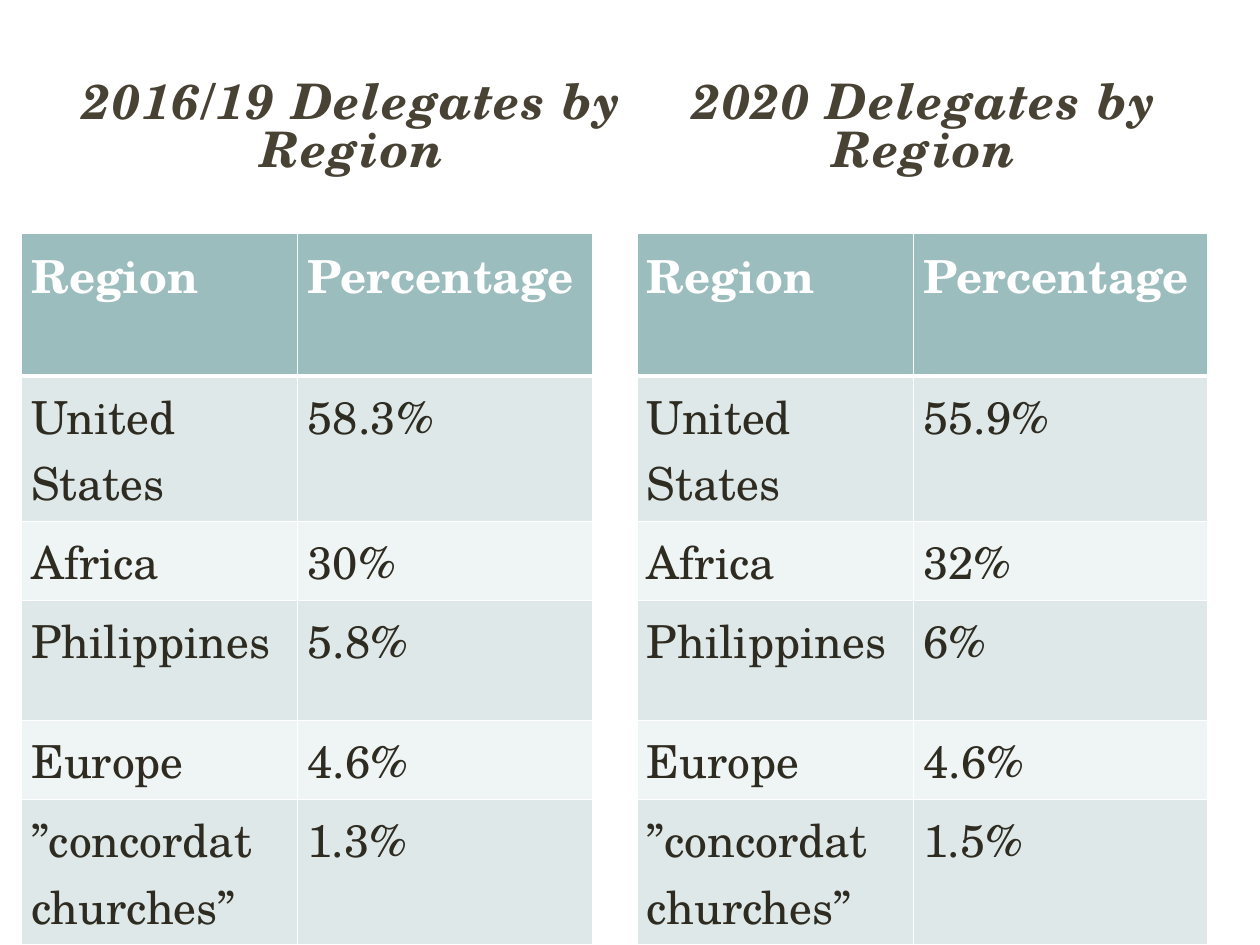
from pptx import Presentation
from pptx.dml.color import RGBColor
from pptx.enum.text import MSO_ANCHOR as Anchor, PP_ALIGN as Align
from pptx.oxml import parse_xml
from pptx.oxml.ns import nsdecls
from pptx.util import Cm, Pt

FONT = "TeX Gyre Schola"
COLUMNS = (5.57, 5.94)
ROWS = (2.87, 2.93, 1.6, 2.41, 1.6, 2.93)
REGIONS = ("United States", "Africa", "Philippines", "Europe", "”concordat churches”")


def colour(value):
    return RGBColor.from_string(value)


class DelegatePage:
    title_ink = "474233"
    body_ink = "2E2B21"
    white = "FFFFFF"
    header_fill = "9CBDBD"
    bands = ("EFF4F4", "DEE8E8")

    def __init__(self, deck):
        self.page = deck.slides.add_slide(deck.slide_layouts[6])

    def style(self, para, size, ink, bold, italic=False):
        font = para.font
        font.name, font.size = FONT, Pt(size)
        font.bold, font.italic = bold, italic
        font.color.rgb = colour(ink)

    def heading(self, text, left, width):
        box = self.page.shapes.add_textbox(Cm(left), Cm(0.91), Cm(width), Cm(3.4))
        frame = box.text_frame
        frame.word_wrap = True
        frame.vertical_anchor = Anchor.MIDDLE
        para = frame.paragraphs[0]
        span = para.add_run()
        span.text = text
        span.font._element.set("spc", "100")
        para.alignment = Align.CENTER
        para.line_spacing = 0.8
        self.style(para, 28, self.title_ink, True, True)

    def border(self, cell, side, width):
        cell._tc.get_or_add_tcPr().append(parse_xml(
            f'<a:ln{side} {nsdecls("a")} w="{Pt(width)}"><a:solidFill>'
            f'<a:srgbClr val="{self.white}"/></a:solidFill></a:ln{side}>'))

    def cell(self, cell, text, row):
        header = row == 0
        cell.text = text
        cell.margin_left = cell.margin_right = Cm(0.2)
        cell.margin_top = cell.margin_bottom = Cm(0.13)
        widths = {"L": 1, "R": 1, "T": 3 if row == 1 else 1, "B": 3 if header else 1}
        for side, width in widths.items():
            self.border(cell, side, width)
        cell.fill.solid()
        cell.fill.fore_color.rgb = colour(self.header_fill if header else self.bands[row % 2])
        ink = self.white if header else self.body_ink
        self.style(cell.text_frame.paragraphs[0], 26, ink, header)

    def table(self, left, shares):
        records = [("Region", "Percentage"), *zip(REGIONS, shares)]
        table = self.page.shapes.add_table(
            len(ROWS), len(COLUMNS), Cm(left), Cm(4.71),
            Cm(sum(COLUMNS)), Cm(sum(ROWS))).table
        for column, width in zip(table.columns, COLUMNS):
            column.width = Cm(width)
        for index, (height, record) in enumerate(zip(ROWS, records)):
            table.rows[index].height = Cm(height)
            for place, text in enumerate(record):
                self.cell(table.cell(index, place), text, index)


def main():
    deck = Presentation()
    deck.slide_width, deck.slide_height = Cm(25.4), Cm(19.05)
    page = DelegatePage(deck)
    page.heading("2016/19 Delegates by Region", 1.29, 11.63)
    page.table(0.43, ("58.3%", "30%", "5.8%", "4.6%", "1.3%"))
    page.heading("2020 Delegates by Region", 12.94, 11.4)
    page.table(12.84, ("55.9%", "32%", "6%", "4.6%", "1.5%"))
    deck.save("out.pptx")


if __name__ == "__main__":
    main()
